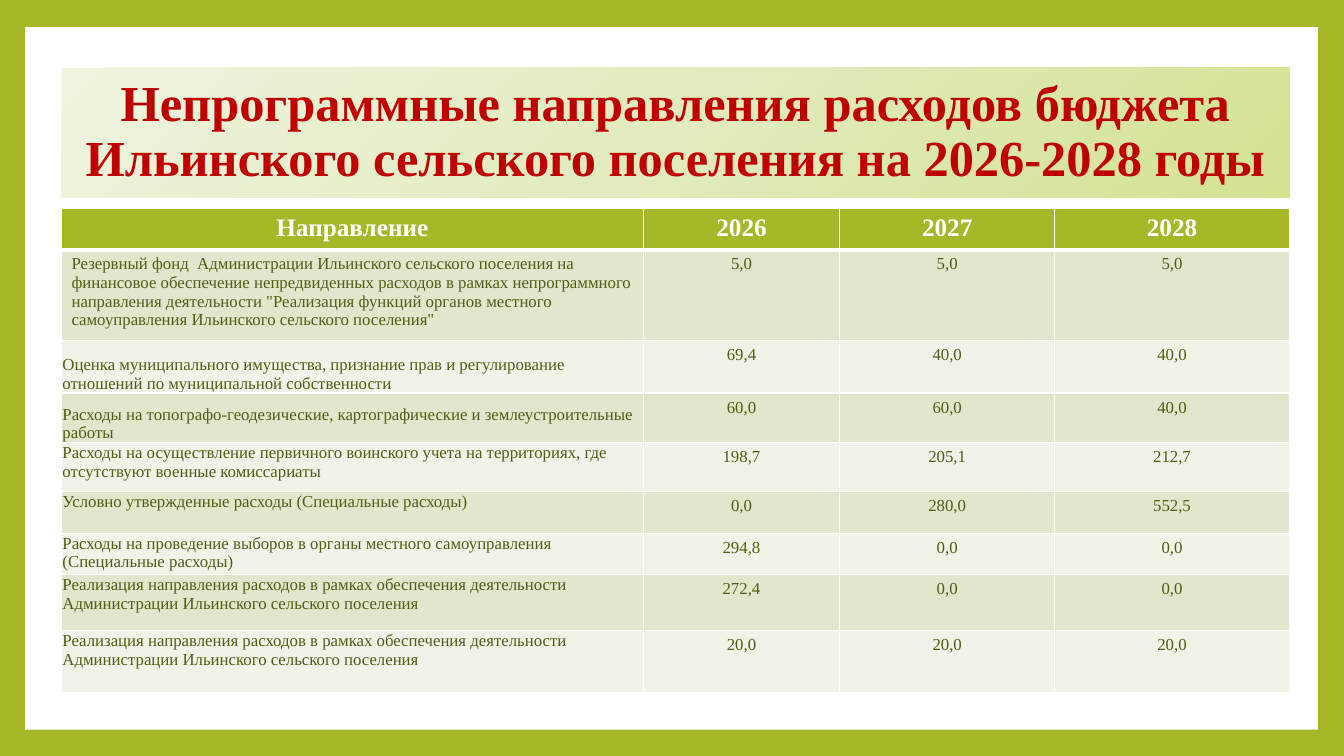
from dataclasses import dataclass

from lxml import etree
from pptx import Presentation
from pptx.dml.color import RGBColor
from pptx.enum import shapes, text
from pptx.oxml import ns, parse_xml
from pptx.util import Inches, Pt

FONT = "Times New Roman"
GREEN = "A6B727"
WHITE = "FFFFFF"
TITLE_RED = "C00000"
BODY_GREEN = "535C14"
BANDS = ("E1E6CD", "F1F3E8")
TITLE_STOPS = ((0, "D4E292"), (50, "E2EBBE"), (100, "F0F5DF"))
COLUMN_WIDTHS = (5.77, 1.95, 2.13, 2.33)
HEADER = ("Направление", "2026", "2027", "2028")
HEADER_HEIGHT = 0.41
LEFT, WIDTH = 0.61, 12.18


@dataclass
class Expense:
    name: str
    amounts: tuple[str, str, str]
    height: float
    anchor: text.MSO_ANCHOR = text.MSO_ANCHOR.TOP
    tight: bool = True


ADMINISTRATION = (
    "Реализация направления расходов в рамках обеспечения деятельности "
    "Администрации Ильинского сельского поселения"
)
EXPENSES = (
    Expense(
        "Резервный фонд  Администрации Ильинского сельского поселения на финансовое "
        "обеспечение непредвиденных расходов в рамках непрограммного направления "
        'деятельности "Реализация функций органов местного самоуправления '
        'Ильинского сельского поселения"',
        ("5,0", "5,0", "5,0"), 0.9, tight=False),
    Expense(
        "Оценка муниципального имущества, признание прав и регулирование "
        "отношений по муниципальной собственности",
        ("69,4", "40,0", "40,0"), 0.52, text.MSO_ANCHOR.BOTTOM),
    Expense(
        "Расходы на топографо-геодезические, картографические и "
        "землеустроительные работы",
        ("60,0", "60,0", "40,0"), 0.49, text.MSO_ANCHOR.BOTTOM),
    Expense(
        "Расходы на осуществление первичного воинского учета на территориях, "
        "где отсутствуют военные комиссариаты",
        ("198,7", "205,1", "212,7"), 0.49),
    Expense("Условно утвержденные расходы (Специальные расходы)",
            ("0,0", "280,0", "552,5"), 0.41),
    Expense(
        "Расходы на проведение выборов в органы местного самоуправления "
        "(Специальные расходы)",
        ("294,8", "0,0", "0,0"), 0.41),
    Expense(ADMINISTRATION, ("272,4", "0,0", "0,0"), 0.56),
    Expense(ADMINISTRATION, ("20,0", "20,0", "20,0"), 0.61),
)


def color(value: str) -> RGBColor:
    return RGBColor.from_string(value)


def write(frame, content: str, *, size: float, fill: str, bold: bool = False,
          align=text.PP_ALIGN.CENTER, spacing: float = 1.0) -> None:
    paragraph = frame.paragraphs[0]
    paragraph.alignment = align
    paragraph.line_spacing = spacing
    run = paragraph.add_run()
    run.text = content
    run.font.name = FONT
    run.font.size = Pt(size)
    run.font.bold = bold
    run.font.color.rgb = color(fill)


def fill_from_corner(shape, stops) -> None:
    """Fill the shape with a gradient spreading from its bottom right corner."""
    stop_xml = "".join(
        f'<a:gs pos="{position * 1000}"><a:srgbClr val="{value}"/></a:gs>'
        for position, value in stops)
    gradient = parse_xml(
        f'<a:gradFill {ns.nsdecls("a")} rotWithShape="1"><a:gsLst>{stop_xml}</a:gsLst>'
        '<a:path path="circle"><a:fillToRect l="100000" t="100000"/></a:path>'
        '</a:gradFill>')
    shape.fill.background()
    properties = shape.element.spPr
    properties.replace(properties.find(ns.qn("a:noFill")), gradient)


def style_cell(cell, fill: str, bottom_width: float = 1) -> None:
    """Fill the cell and give it white borders."""
    cell.fill.solid()
    cell.fill.fore_color.rgb = color(fill)
    properties = cell.fill.fore_color and cell._tc.get_or_add_tcPr()
    widths = {"lnL": 1, "lnR": 1, "lnT": 1, "lnB": bottom_width}
    for index, (side, width) in enumerate(widths.items()):
        line = etree.Element(ns.qn(f"a:{side}"), w=str(Pt(width)))
        solid = etree.SubElement(line, ns.qn("a:solidFill"))
        etree.SubElement(solid, ns.qn("a:srgbClr"), val=WHITE)
        properties.insert(index, line)


def add_title(slide) -> None:
    title = slide.shapes.title
    title.left, title.top = Inches(LEFT), Inches(0.67)
    title.width, title.height = Inches(WIDTH), Inches(1.29)
    fill_from_corner(title, TITLE_STOPS)
    frame = title.text_frame
    frame.word_wrap = True
    frame.auto_size = text.MSO_AUTO_SIZE.NONE
    frame.vertical_anchor = text.MSO_ANCHOR.MIDDLE
    write(frame, "Непрограммные направления расходов бюджета Ильинского сельского "
          "поселения на 2026-2028 годы", size=36, fill=TITLE_RED, bold=True, spacing=0.9)


def add_panel(slide) -> None:
    """Put the white panel behind the title."""
    panel = slide.shapes.add_shape(
        shapes.MSO_SHAPE.RECTANGLE, Inches(0.25), Inches(0.27), Inches(12.82), Inches(6.97))
    panel.shadow.inherit = False
    panel.fill.solid()
    panel.fill.fore_color.rgb = color(WHITE)
    panel.line.fill.background()
    slide.shapes.title.element.addprevious(panel.element)


def add_expense_table(slide) -> None:
    heights = [HEADER_HEIGHT] + [expense.height for expense in EXPENSES]
    table = slide.shapes.add_table(
        len(heights), len(COLUMN_WIDTHS), Inches(LEFT), Inches(2.07),
        Inches(WIDTH), Inches(sum(heights))).table
    for column, width in zip(table.columns, COLUMN_WIDTHS):
        column.width = Inches(width)
    for row, height in zip(table.rows, heights):
        row.height = Inches(height)

    for cell, heading in zip(table.rows[0].cells, HEADER):
        style_cell(cell, GREEN, bottom_width=3)
        write(cell.text_frame, heading, size=18, fill=WHITE, bold=True)

    for index, expense in enumerate(EXPENSES):
        name_cell, *amount_cells = table.rows[index + 1].cells
        for cell in (name_cell, *amount_cells):
            style_cell(cell, BANDS[index % 2])
        name_cell.vertical_anchor = expense.anchor
        if expense.tight:
            name_cell.margin_left = name_cell.margin_right = Inches(0.01)
            name_cell.margin_top, name_cell.margin_bottom = Inches(0.01), 0
        write(name_cell.text_frame, expense.name, size=12, fill=BODY_GREEN,
              align=text.PP_ALIGN.LEFT)
        for cell, amount in zip(amount_cells, expense.amounts):
            write(cell.text_frame, amount, size=12, fill=BODY_GREEN)


def main() -> None:
    presentation = Presentation()
    presentation.slide_width, presentation.slide_height = Inches(13.33), Inches(7.5)
    slide = presentation.slides.add_slide(presentation.slide_layouts.get_by_name("Title Only"))
    slide.background.fill.solid()
    slide.background.fill.fore_color.rgb = color(GREEN)
    add_title(slide)
    add_panel(slide)
    add_expense_table(slide)
    presentation.save("out.pptx")


if __name__ == "__main__":
    main()
